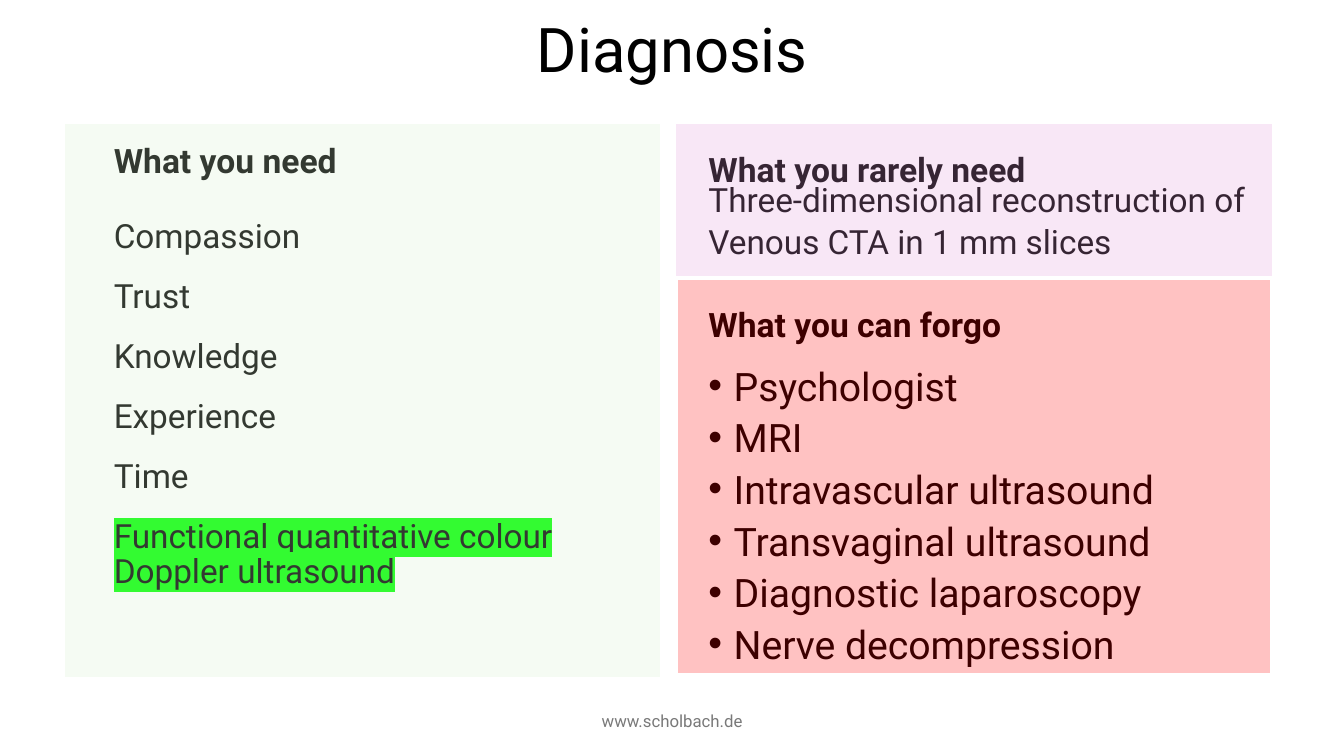
from collections import namedtuple
from dataclasses import dataclass

from lxml.etree import SubElement
from pptx import Presentation
from pptx.dml.color import RGBColor
from pptx.enum.shapes import MSO_SHAPE
from pptx.enum.text import MSO_ANCHOR, PP_ALIGN
from pptx.oxml import parse_xml
from pptx.oxml.ns import nsdecls, qn
from pptx.util import Pt

Box = namedtuple("Box", "left top width height")


@dataclass(frozen=True)
class Theme:
    font: str = "Roboto"
    ink: str = "000000"
    footer_ink: str = "797979"
    marker: str = "00FF00"
    border: str = "FFFFFF"
    need: str = "D9F2D0"
    rarely: str = "E59EDD"
    forgo: str = "FF0000"
    opacity: int = 24
    title_size: float = 44
    heading_size: float = 24
    item_size: float = 23.8
    bullet_size: float = 28
    footer_size: float = 12


THEME = Theme()


def apply(target, formats):
    for name, value in formats.items():
        setattr(target, name, value)


def inside(box, left, top, width, height):
    """Return a box whose left and top are measured from another box."""
    return Box(box.left + left, box.top + top, width, height)


def add_bullet(paragraph):
    properties = paragraph._p.get_or_add_pPr()
    properties.set("marL", str(Pt(18)))
    properties.set("indent", str(-Pt(18)))
    SubElement(properties, qn("a:buFont"), typeface="Arial")
    SubElement(properties, qn("a:buChar"), char="•")


def highlight(run, colour):
    fill = run._r.rPr.find(qn("a:solidFill"))
    fill.addnext(parse_xml(
        f'<a:highlight {nsdecls("a")}><a:srgbClr val="{colour}"/></a:highlight>'))


def add_text(slide, box, lines, size, colour=THEME.ink, bold=False, bullets=False,
             marked=(), frame_format=None, paragraph_format=None):
    frame = slide.shapes.add_textbox(*map(Pt, box)).text_frame
    apply(frame, {"word_wrap": True, **(frame_format or {})})
    for index, line in enumerate(lines):
        paragraph = frame.add_paragraph() if index else frame.paragraphs[0]
        apply(paragraph, paragraph_format or {})
        if not index:
            paragraph.space_before = Pt(0)
        if bullets:
            add_bullet(paragraph)
        run = paragraph.add_run()
        run.text = line
        apply(run.font, {"name": THEME.font, "size": Pt(size), "bold": bold})
        run.font.color.rgb = RGBColor.from_string(colour)
        if line in marked:
            highlight(run, THEME.marker)


def add_veil(slide, box, tint):
    """Lay a translucent, white-edged rectangle over the panel's text."""
    veil = slide.shapes.add_shape(MSO_SHAPE.RECTANGLE, *map(Pt, box))
    veil.shadow.inherit = False
    veil.fill.solid()
    veil.fill.fore_color.rgb = RGBColor.from_string(tint)
    colour = veil.fill._xPr.find(qn("a:solidFill"))[0]
    SubElement(colour, qn("a:alpha"), val=str(THEME.opacity * 1000))
    veil.line.color.rgb = RGBColor.from_string(THEME.border)
    veil.line.width = Pt(3)


def add_heading(slide, box, heading, gap_below):
    add_text(slide, box, [heading], THEME.heading_size, bold=True,
             frame_format={"vertical_anchor": MSO_ANCHOR.BOTTOM,
                           "margin_bottom": Pt(gap_below)},
             paragraph_format={"line_spacing": 0.9})


def need_panel(slide, box):
    add_heading(slide, inside(box, 29.6, -19.4, 406, 64.8), "What you need", 3.6)
    doppler = "Functional quantitative colour Doppler ultrasound"
    add_text(slide, inside(box, 29.6, 67, 406, 290),
             ["Compassion", "Trust", "Knowledge", "Experience", "Time", doppler],
             THEME.item_size, marked=[doppler],
             paragraph_format={"line_spacing": 0.87, "space_before": Pt(10),
                               "space_after": Pt(8)})
    add_veil(slide, box, THEME.need)


def rarely_panel(slide, box):
    add_heading(slide, inside(box, 17.3, 13, 408.2, 64.8), "What you rarely need", 29)
    add_text(slide, inside(box, 17.3, 45.4, 408.2, 72),
             ["Three-dimensional reconstruction of", "Venous CTA in 1 mm slices"],
             THEME.item_size,
             paragraph_format={"line_spacing": 0.7, "space_before": Pt(10)})
    add_veil(slide, box, THEME.rarely)


def forgo_panel(slide, box):
    add_heading(slide, inside(box, 15.9, 11.5, 408.2, 64.8), "What you can forgo", 29)
    add_text(slide, inside(box, 15.9, 62.7, 408.2, 228),
             ["Psychologist", "MRI", "Intravascular ultrasound",
              "Transvaginal ultrasound", "Diagnostic laparoscopy",
              "Nerve decompression"],
             THEME.bullet_size, bullets=True,
             paragraph_format={"line_spacing": 0.8, "space_before": Pt(10)})
    add_veil(slide, box, THEME.forgo)


def centred_line(slide, box, line, size, colour, spacing):
    add_text(slide, box, [line], size, colour,
             frame_format={"vertical_anchor": MSO_ANCHOR.MIDDLE},
             paragraph_format={"alignment": PP_ALIGN.CENTER, "line_spacing": spacing})


def diagnosis_slide(deck):
    slide = deck.slides.add_slide(deck.slide_layouts[6])
    centred_line(slide, Box(53.3, 6.5, 854, 62), "Diagnosis",
                 THEME.title_size, THEME.ink, 0.9)
    need_panel(slide, Box(44.6, 87.1, 428.4, 398.2))
    rarely_panel(slide, Box(481.7, 87.1, 428.4, 114.5))
    forgo_panel(slide, Box(483.1, 198.7, 425.5, 283.7))
    centred_line(slide, Box(318.2, 500.4, 324, 28.8), "www.scholbach.de",
                 THEME.footer_size, THEME.footer_ink, 1.0)


def main():
    deck = Presentation()
    apply(deck, {"slide_width": Pt(960), "slide_height": Pt(540)})
    diagnosis_slide(deck)
    deck.save("out.pptx")


if __name__ == "__main__":
    main()
